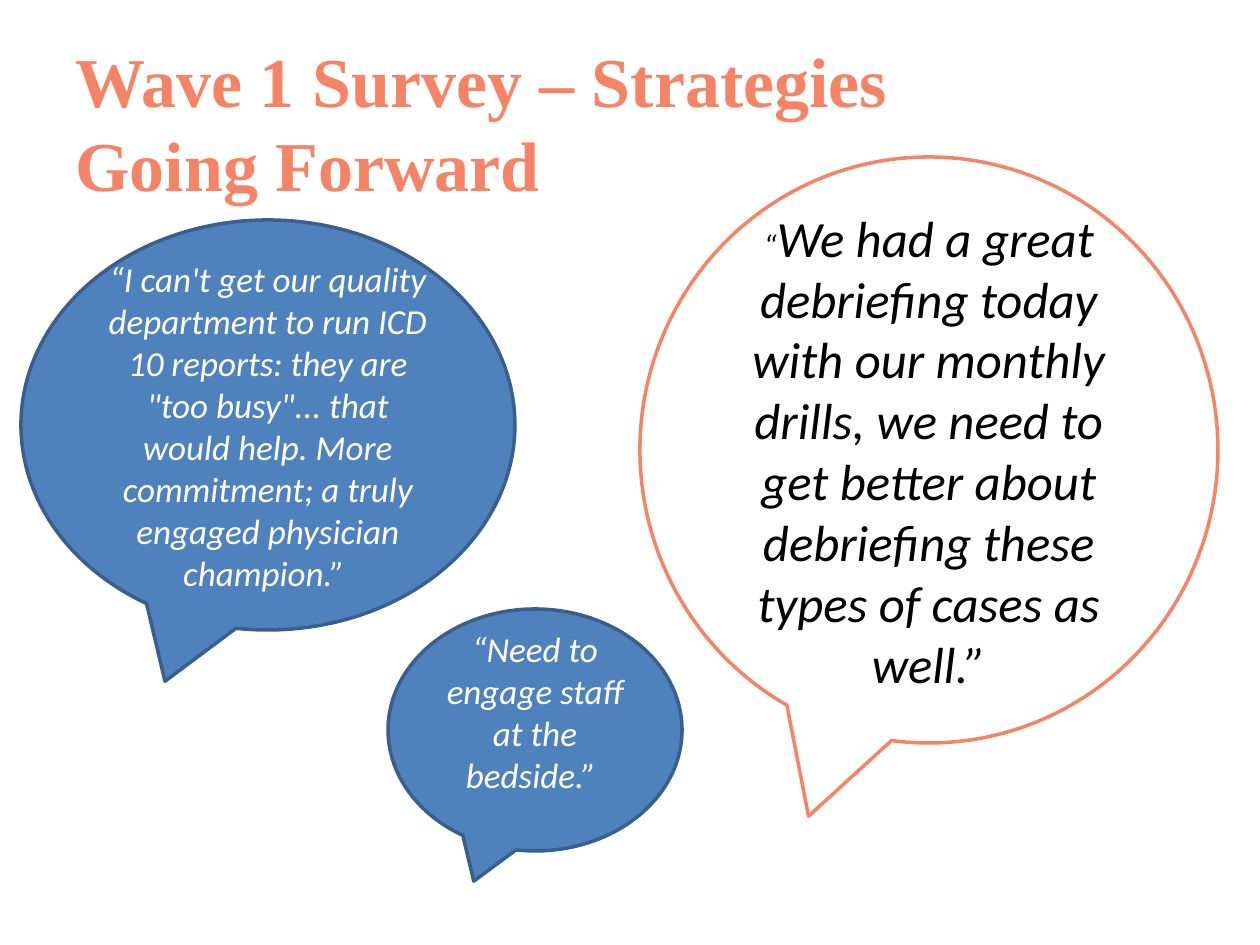
from pptx import Presentation
from pptx.dml.color import RGBColor
from pptx.enum.shapes import MSO_SHAPE as Shape
from pptx.enum.text import MSO_ANCHOR as Anchor, PP_ALIGN as Align
from pptx.util import Emu, Pt

CORAL = RGBColor(0xF5, 0x84, 0x66)
BLUE = RGBColor(0x4F, 0x81, 0xBD)
NAVY = RGBColor(0x3A, 0x5F, 0x8C)
WHITE = RGBColor(0xFF, 0xFF, 0xFF)
BLACK = RGBColor(0x00, 0x00, 0x00)


def px(length):
    return Emu(round(length * 914400 / 126))


class SlideBuilder:
    heading_font = "Times New Roman"
    quote_font = "Calibri"

    def __init__(self, slide):
        self.slide = slide

    def title(self, text, left, top, width, height):
        heading = self.slide.shapes.add_textbox(*map(px, (left, top, width, height)))
        frame = heading.text_frame
        frame.word_wrap = True
        frame.vertical_anchor = Anchor.MIDDLE
        paragraph = frame.paragraphs[0]
        paragraph.text = text
        for run in paragraph.runs:
            run.font.name = self.heading_font
            run.font.size = Pt(40)
            run.font.bold = True
            run.font.color.rgb = CORAL

    def bubble(self, parts, left, top, width, height, fill, line, ink, bottom_inset=6):
        callout = self.slide.shapes.add_shape(
            Shape.OVAL_CALLOUT, *map(px, (left, top, width, height)))
        callout.shadow.inherit = False
        callout.fill.solid()
        callout.fill.fore_color.rgb = fill
        callout.line.color.rgb = line
        callout.line.width = Pt(2)
        frame = callout.text_frame
        frame.word_wrap = True
        frame.vertical_anchor = Anchor.MIDDLE
        frame.margin_bottom = px(bottom_inset)
        quote = frame.paragraphs[0]
        quote.alignment = Align.CENTER
        quote.level = 1
        properties = quote._p.get_or_add_pPr()
        properties.set("marL", "0")
        properties.set("indent", "0")
        for text, size in parts:
            run = quote.add_run()
            run.text = text
            run.font.name = self.quote_font
            run.font.size = Pt(size)
            run.font.italic = True
            run.font.color.rgb = ink


def main():
    deck = Presentation()
    deck.slide_width, deck.slide_height = px(1260), px(945)
    builder = SlideBuilder(deck.slides.add_slide(deck.slide_layouts[6]))

    builder.title("Wave 1 Survey – Strategies\vGoing Forward", 63, 42, 1134, 158)
    builder.bubble(
        [("“I can't get our quality department to run ICD 10 reports: they are "
          "\"too busy\"... that would help. More commitment; a truly engaged "
          "physician champion.” ", 20)],
        21, 220, 494, 410, BLUE, NAVY, WHITE)
    builder.bubble(
        [("“Need to engage staff at the bedside.” ", 20)],
        388, 609, 294, 242, BLUE, NAVY, WHITE, bottom_inset=44)
    builder.bubble(
        [("“", 18),
         ("We had a great debriefing today with our monthly drills, we need to "
          "get better about debriefing these types of cases as well.”", 29)],
        640, 157, 578, 586, WHITE, CORAL, BLACK)

    deck.save("out.pptx")


if __name__ == "__main__":
    main()
